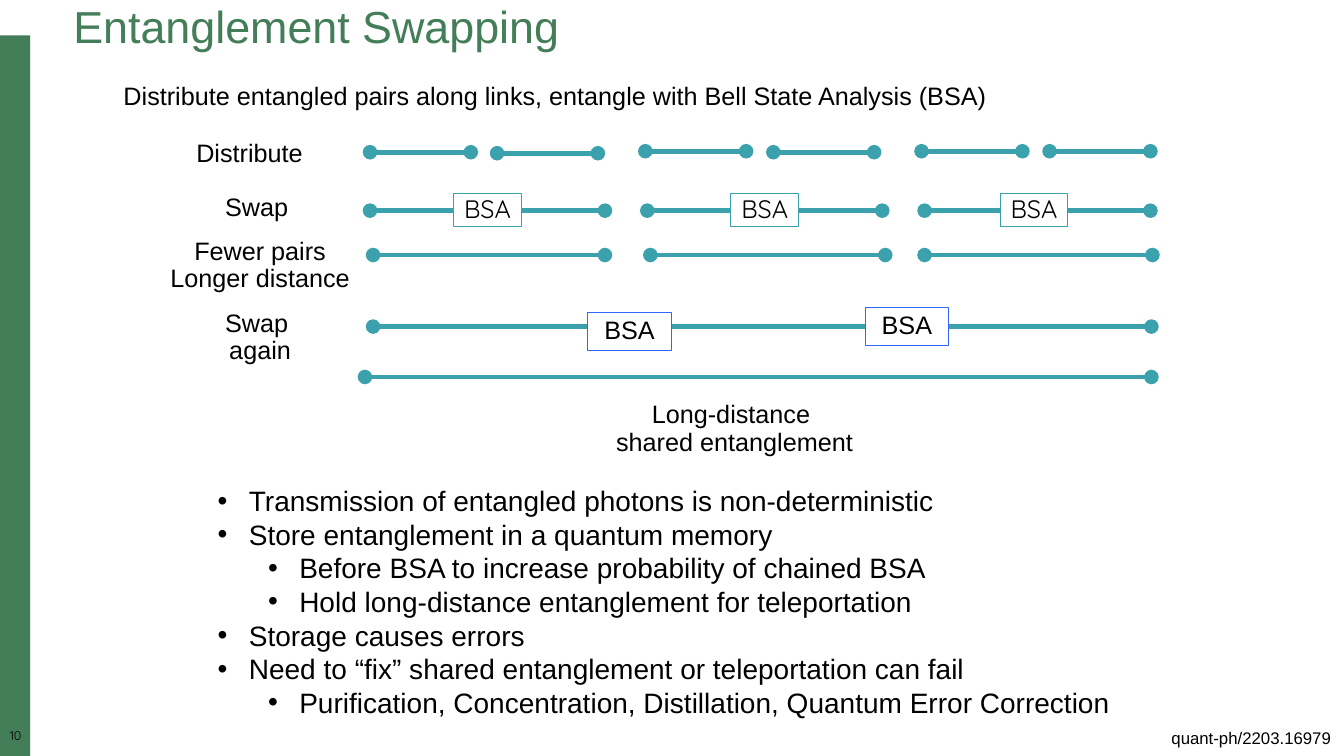
from dataclasses import dataclass

from lxml import etree
from pptx import Presentation
from pptx import util as u
from pptx.dml.color import RGBColor
from pptx.enum import shapes, text
from pptx.oxml.ns import qn


@dataclass(frozen=True)
class Theme:
    green: str = "447E59"
    teal: str = "3BA2AD"
    blue: str = "3366FF"
    black: str = "000000"
    white: str = "FFFFFF"
    font: str = "Arial"
    accent_font: str = "Quicksand"
    title_size: int = 32
    bullet_size: int = 20
    label_size: int = 18
    reference_size: int = 12
    number_size: int = 9
    link_width: float = 3.5
    border_width: float = 0.75


@dataclass(frozen=True)
class Label:
    lines: tuple
    left: float
    top: float
    width: float
    height: float
    size: int = Theme.label_size
    color: str = Theme.black
    font: str = Theme.font
    align: text.PP_ALIGN = text.PP_ALIGN.CENTER
    spacing: float = 0.9
    wrap: bool = False
    inset: bool = True


@dataclass(frozen=True)
class LinkRow:
    """Entangled pairs at one height, each span running from x to x."""
    y: float
    spans: tuple


@dataclass(frozen=True)
class Analyzer:
    """A box marked BSA that joins two links."""
    left: float
    top: float
    width: float
    height: float
    border: str
    font: str
    inset: float


THEME = Theme()
LEFT = text.PP_ALIGN.LEFT

LABELS = [
    Label(("Entanglement Swapping",), 0.63, 0, 9.44, 0.59, THEME.title_size,
          THEME.green, align=LEFT, wrap=True),
    Label(("Distribute entangled pairs along links, entangle with Bell State Analysis (BSA)",),
          1.08, 0.78, 8.85, 0.38),
    Label(("Distribute",), 1.84, 1.35, 1.27, 0.38),
    Label(("Swap",), 2.13, 1.88, 0.83, 0.38),
    Label(("Fewer pairs", "Longer distance"), 1.58, 2.32, 2, 0.65),
    Label(("Swap ", "again"), 2.13, 3.03, 0.9, 0.65),
    Label(("Long-distance ", "shared entanglement"), 6, 3.94, 2.57, 0.65),
    Label(("quant-ph/2203.16979",), 11.52, 7.17, 2.72, 0.3, THEME.reference_size,
          align=LEFT, spacing=1, wrap=True),
    Label(("10",), 0, 7.24, 0.31, 0.17, THEME.number_size,
          font=THEME.accent_font, wrap=True, inset=False),
]

LINK_ROWS = [
    LinkRow(1.5, ((6.4, 7.4), (9.14, 10.14), (10.41, 11.41))),
    LinkRow(1.51, ((3.67, 4.67), (7.67, 8.67))),
    LinkRow(1.52, ((4.93, 5.93),)),
    LinkRow(2.09, ((3.67, 4.67), (5, 6), (6.42, 7.42), (7.75, 8.75),
                   (9.17, 10), (10.33, 11.41))),
    LinkRow(2.53, ((3.7, 6), (6.45, 8.78), (9.17, 11.43))),
    LinkRow(3.24, ((3.7, 6), (6.5, 8.78), (9.17, 11.42))),
    LinkRow(3.74, ((3.62, 11.42),)),
]

ANALYZERS = [
    Analyzer(left, 1.92, 0.67, 0.33, THEME.teal, THEME.accent_font, 0.05)
    for left in (4.5, 7.25, 9.92)
] + [
    Analyzer(left, top, 0.83, 0.38, THEME.blue, THEME.font, 0.1)
    for left, top in ((5.83, 3.1), (8.58, 3.05))
]

BULLETS = [
    (0, "Transmission of entangled photons is non-deterministic"),
    (0, "Store entanglement in a quantum memory"),
    (1, "Before BSA to increase probability of chained BSA"),
    (1, "Hold long-distance entanglement for teleportation"),
    (0, "Storage causes errors"),
    (0, "Need to “fix” shared entanglement or teleportation can fail"),
    (1, "Purification, Concentration, Distillation, Quantum Error Correction"),
]


def rgb(color: str) -> RGBColor:
    return RGBColor.from_string(color)


def box(left: float, top: float, width: float, height: float) -> tuple:
    return tuple(u.Inches(value) for value in (left, top, width, height))


def format_text(paragraph, size: int, color: str, font: str) -> None:
    for run in paragraph.runs:
        run.font.size = u.Pt(size)
        run.font.name = font
        run.font.color.rgb = rgb(color)


def set_insets(frame, sides: float, ends: float) -> None:
    frame.margin_left = frame.margin_right = u.Inches(sides)
    frame.margin_top = frame.margin_bottom = u.Inches(ends)


def add_label(slide, label: Label) -> None:
    shape = slide.shapes.add_textbox(*box(label.left, label.top, label.width, label.height))
    frame = shape.text_frame
    frame.text = "\n".join(label.lines)
    frame.word_wrap = label.wrap
    if label.inset:
        frame.auto_size = text.MSO_AUTO_SIZE.SHAPE_TO_FIT_TEXT
    else:
        set_insets(frame, 0, 0)
    for paragraph in frame.paragraphs:
        paragraph.alignment = label.align
        paragraph.line_spacing = label.spacing
        format_text(paragraph, label.size, label.color, label.font)


def add_rectangle(slide, place: tuple, fill: str):
    shape = slide.shapes.add_shape(shapes.MSO_SHAPE.RECTANGLE, *place)
    shape.shadow.inherit = False
    shape.fill.solid()
    shape.fill.fore_color.rgb = rgb(fill)
    shape.line.fill.background()
    return shape


def add_link(slide, start: float, end: float, y: float) -> None:
    """Draw an entangled pair: a line with a dot at each end."""
    link = slide.shapes.add_connector(
        shapes.MSO_CONNECTOR.STRAIGHT, *box(start, y, end, y))
    link.line.color.rgb = rgb(THEME.teal)
    link.line.width = u.Pt(THEME.link_width)
    line = link.line._get_or_add_ln()
    for tag in ("a:headEnd", "a:tailEnd"):
        etree.SubElement(line, qn(tag), type="oval")
    etree.SubElement(link._element.spPr, qn("a:effectLst"))


def add_analyzer(slide, analyzer: Analyzer) -> None:
    shape = add_rectangle(
        slide, box(analyzer.left, analyzer.top, analyzer.width, analyzer.height), THEME.white)
    shape.line.color.rgb = rgb(analyzer.border)
    shape.line.width = u.Pt(THEME.border_width)
    frame = shape.text_frame
    frame.text = "BSA"
    frame.word_wrap = True
    frame.vertical_anchor = text.MSO_ANCHOR.MIDDLE
    set_insets(frame, analyzer.inset, 0.05)
    paragraph = frame.paragraphs[0]
    paragraph.alignment = text.PP_ALIGN.CENTER
    paragraph.line_spacing = 0.9
    format_text(paragraph, THEME.label_size, THEME.black, analyzer.font)


def add_bullets(slide) -> None:
    frame = slide.shapes.add_textbox(*box(2.06, 4.75, 12.41, 2.46)).text_frame
    frame.text = "\n".join(line for _, line in BULLETS)
    frame.word_wrap = True
    frame.auto_size = text.MSO_AUTO_SIZE.SHAPE_TO_FIT_TEXT
    for paragraph, (level, _) in zip(frame.paragraphs, BULLETS):
        paragraph.level = level
        properties = paragraph._p.get_or_add_pPr()
        properties.set("marL", str(u.Inches(0.31 + 0.5 * level)))
        properties.set("indent", str(u.Inches(-0.31)))
        etree.SubElement(properties, qn("a:buFont"), typeface=THEME.font)
        etree.SubElement(properties, qn("a:buChar"), char="•")
        format_text(paragraph, THEME.bullet_size, THEME.black, THEME.font)


def main() -> None:
    presentation = Presentation()
    presentation.slide_width = u.Inches(13.33)
    presentation.slide_height = u.Inches(7.5)
    slide = presentation.slides.add_slide(presentation.slide_layouts[6])
    add_rectangle(slide, box(0, 0.35, 0.3, 7.15), THEME.green)
    for row in LINK_ROWS:
        for start, end in row.spans:
            add_link(slide, start, end, row.y)
    for analyzer in ANALYZERS:
        add_analyzer(slide, analyzer)
    for label in LABELS:
        add_label(slide, label)
    add_bullets(slide)
    presentation.save("out.pptx")


if __name__ == "__main__":
    main()
